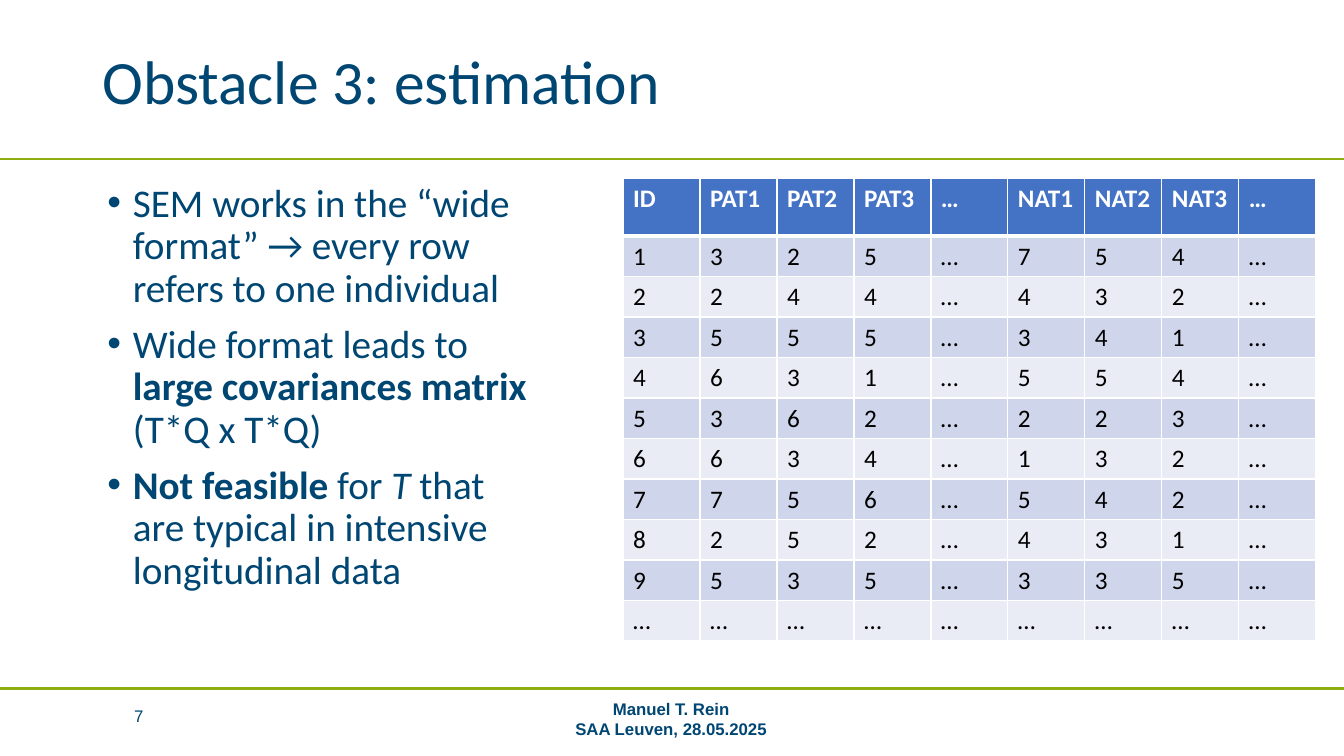
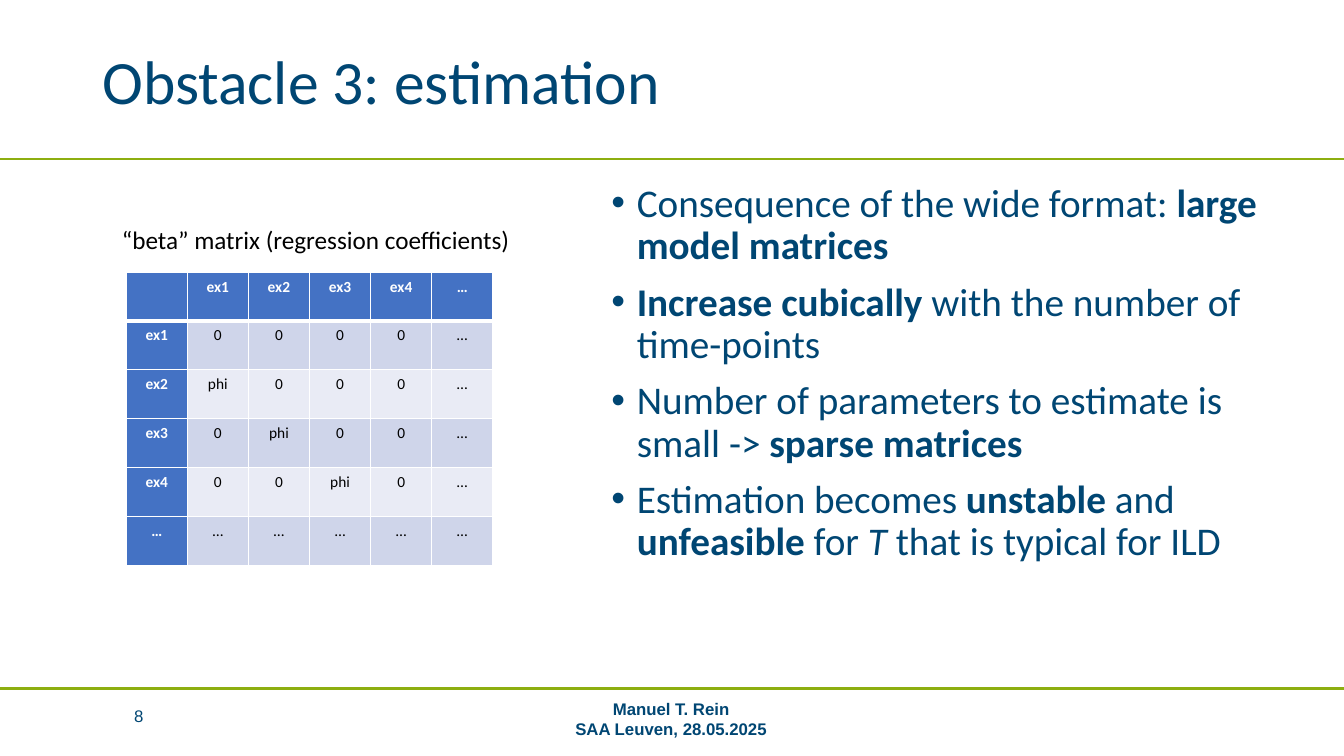
from typing import NamedTuple, Sequence

import pptx
import pptx.dml.color
import pptx.enum.shapes
import pptx.enum.text
import pptx.oxml
import pptx.oxml.ns
import pptx.oxml.xmlchemy
import pptx.slide
import pptx.text.text
import pptx.util

Cm = pptx.util.Cm
Pt = pptx.util.Pt
RGBColor = pptx.dml.color.RGBColor
Align = pptx.enum.text.PP_ALIGN
Anchor = pptx.enum.text.MSO_ANCHOR

NAVY = RGBColor(0x00, 0x46, 0x73)
GREEN = RGBColor(0x8D, 0xAE, 0x10)
HEADER_BLUE = RGBColor(0x44, 0x72, 0xC4)
ODD_ROW = RGBColor(0xCF, 0xD5, 0xEA)
EVEN_ROW = RGBColor(0xE9, 0xEB, 0xF5)
WHITE = RGBColor(0xFF, 0xFF, 0xFF)
BLACK = RGBColor(0x00, 0x00, 0x00)

SLIDE_WIDTH = Cm(33.87)
SLIDE_HEIGHT = Cm(19.05)
RULE_TOPS = (Cm(17.35), Cm(4.01))
BULLET_INDENT = Cm(0.64)
TITLE = "Obstacle 3: estimation"
FOOTER = ("Manuel T. Rein", "SAA Leuven, 28.05.2025")


class Run(NamedTuple):
    text: str
    bold: bool = False
    italic: bool = False


class Box(NamedTuple):
    left: float
    top: float
    width: float
    height: float


class Grid(NamedTuple):
    left: float
    top: float
    column_width: float
    header_height: float
    row_height: float
    rows: Sequence[Sequence[str]]
    size: float
    align: Align
    header_column: bool = False


TITLE_BOX = Box(2.33, 0.66, 29.21, 2.95)
FOOTER_BOX = Box(9.65, 17.6, 14.53, 1.02)
NUMBER_BOX = Box(2.33, 17.53, 2.33, 1.02)

WIDE_FORMAT = Grid(
    15.7, 4.5, 1.94, 1.45, 1.02,
    [line.split() for line in (
        "ID PAT1 PAT2 PAT3 … NAT1 NAT2 NAT3 …",
        "1 3 2 5 … 7 5 4 …",
        "2 2 4 4 … 4 3 2 …",
        "3 5 5 5 … 3 4 1 …",
        "4 6 3 1 … 5 5 4 …",
        "5 3 6 2 … 2 2 3 …",
        "6 6 3 4 … 1 3 2 …",
        "7 7 5 6 … 5 4 2 …",
        "8 2 5 2 … 4 3 1 …",
        "9 5 3 5 … 3 3 5 …",
        "… … … … … … … … …",
    )],
    18, Align.LEFT)

BETA_MATRIX = Grid(
    3.18, 6.86, 1.54, 1.23, 1.23,
    [
        ["", "ex1", "ex2", "ex3", "ex4", "…"],
        ["ex1", "0", "0", "0", "0", "…"],
        ["ex2", "phi", "0", "0", "0", "…"],
        ["ex3", "0", "phi", "0", "0", "…"],
        ["ex4", "0", "0", "phi", "0", "…"],
        ["…"] * 6,
    ],
    11, Align.CENTER, header_column=True)

WIDE_FORMAT_POINTS = [
    [Run("SEM works in the “wide format” → every row refers to one individual")],
    [Run("Wide format leads to "), Run("large covariances matrix ", bold=True),
     Run("(T*Q x T*Q)")],
    [Run("Not feasible", bold=True), Run(" for "), Run("T", italic=True),
     Run(" that are typical in intensive longitudinal data")],
]

MATRIX_POINTS = [
    [Run("Consequence of the wide format: "), Run("large model matrices", bold=True)],
    [Run("Increase cubically ", bold=True), Run("with the number of time-points")],
    [Run("Number of parameters to estimate is small -> "),
     Run("sparse matrices", bold=True)],
    [Run("Estimation becomes "), Run("unstable", bold=True), Run(" and "),
     Run("unfeasible", bold=True), Run(" for "), Run("T", italic=True),
     Run(" that is typical for ILD")],
]


def add_bullet(paragraph: pptx.text.text._Paragraph) -> None:
    properties = paragraph._p.get_or_add_pPr()
    properties.set("marL", str(BULLET_INDENT))
    properties.set("indent", str(-BULLET_INDENT))
    for tag, name, value in (("a:buFont", "typeface", "Arial"), ("a:buChar", "char", "•")):
        bullet = pptx.oxml.xmlchemy.OxmlElement(tag)
        bullet.set(name, value)
        properties.append(bullet)


def write_text(frame: pptx.text.text.TextFrame, paragraphs: Sequence[Sequence[Run]], *,
               size: float, color: RGBColor = NAVY, font: str = "Calibri",
               align: Align = Align.LEFT, line_spacing: float = 1.0,
               space_before: float = 0, bulleted: bool = False) -> None:
    for index, runs in enumerate(paragraphs):
        paragraph = frame.add_paragraph() if index else frame.paragraphs[0]
        paragraph.alignment = align
        paragraph.line_spacing = line_spacing
        paragraph.space_before = Pt(space_before)
        if bulleted:
            add_bullet(paragraph)
        for part in runs:
            run = paragraph.add_run()
            run.text = part.text
            run.font.size = Pt(size)
            run.font.name = font
            run.font.color.rgb = color
            run.font.bold = part.bold
            run.font.italic = part.italic


def add_frame(slide: pptx.slide.Slide, box: Box, *, anchor: Anchor = Anchor.TOP,
              inset: bool = True) -> pptx.text.text.TextFrame:
    frame = slide.shapes.add_textbox(*(Cm(length) for length in box)).text_frame
    frame.word_wrap = True
    frame.vertical_anchor = anchor
    if not inset:
        frame.margin_left = frame.margin_right = 0
        frame.margin_top = frame.margin_bottom = 0
    return frame


def add_rule(slide: pptx.slide.Slide, top: int) -> None:
    rule = slide.shapes.add_connector(
        pptx.enum.shapes.MSO_CONNECTOR.STRAIGHT, 0, top, SLIDE_WIDTH, top)
    rule.line.color.rgb = GREEN
    rule.line.width = Pt(1.5)
    rule._element.spPr.append(pptx.oxml.xmlchemy.OxmlElement("a:effectLst"))


def set_borders(cell: pptx.table._Cell, *, top: float, bottom: float) -> None:
    properties = cell._tc.get_or_add_tcPr()
    for side, width in (("L", 1), ("R", 1), ("T", top), ("B", bottom)):
        properties.append(pptx.oxml.parse_xml(
            f'<a:ln{side} {pptx.oxml.ns.nsdecls("a")} w="{Pt(width)}">'
            f'<a:solidFill><a:srgbClr val="{WHITE}"/></a:solidFill></a:ln{side}>'))


def add_grid(slide: pptx.slide.Slide, grid: Grid) -> None:
    row_count, column_count = len(grid.rows), len(grid.rows[0])
    table = slide.shapes.add_table(
        row_count, column_count, Cm(grid.left), Cm(grid.top),
        Cm(grid.column_width * column_count),
        Cm(grid.header_height + grid.row_height * (row_count - 1))).table
    for column in table.columns:
        column.width = Cm(grid.column_width)
    for row_index, values in enumerate(grid.rows):
        table.rows[row_index].height = Cm(
            grid.row_height if row_index else grid.header_height)
        for column_index, value in enumerate(values):
            cell = table.cell(row_index, column_index)
            is_header = row_index == 0 or (grid.header_column and column_index == 0)
            set_borders(cell, top=3 if row_index == 1 else 1,
                        bottom=1 if row_index else 3)
            cell.fill.solid()
            band = ODD_ROW if row_index % 2 else EVEN_ROW
            cell.fill.fore_color.rgb = HEADER_BLUE if is_header else band
            if value:
                write_text(cell.text_frame, [[Run(value, bold=is_header)]],
                           size=grid.size, align=grid.align,
                           color=WHITE if is_header else BLACK)


def add_content_slide(deck: pptx.presentation.Presentation, number: int, grid: Grid,
                      points: Sequence[Sequence[Run]], points_box: Box) -> pptx.slide.Slide:
    slide = deck.slides.add_slide(deck.slide_layouts[6])
    write_text(add_frame(slide, FOOTER_BOX, anchor=Anchor.MIDDLE, inset=False),
               [[Run(line, bold=True)] for line in FOOTER],
               size=12, font="Arial", align=Align.CENTER)
    write_text(add_frame(slide, NUMBER_BOX, anchor=Anchor.MIDDLE, inset=False),
               [[Run(str(number))]], size=12, font="Arial", align=Align.CENTER)
    for top in RULE_TOPS:
        add_rule(slide, top)
    write_text(add_frame(slide, TITLE_BOX, anchor=Anchor.MIDDLE), [[Run(TITLE)]],
               size=44, line_spacing=0.9)
    add_grid(slide, grid)
    write_text(add_frame(slide, points_box), points, size=28, line_spacing=0.9,
               space_before=10, bulleted=True)
    return slide


def main() -> None:
    deck = pptx.Presentation()
    deck.slide_width = SLIDE_WIDTH
    deck.slide_height = SLIDE_HEIGHT
    add_content_slide(deck, 7, WIDE_FORMAT, WIDE_FORMAT_POINTS,
                      Box(2.46, 4.5, 11.46, 12.09))
    matrix_slide = add_content_slide(deck, 8, BETA_MATRIX, MATRIX_POINTS,
                                     Box(15.16, 4.5, 17.58, 12.09))
    write_text(add_frame(matrix_slide, Box(2.82, 5.54, 10.97, 1.02)),
               [[Run("“beta” matrix (regression coefficients)")]], size=18, color=BLACK)
    deck.save("out.pptx")


if __name__ == "__main__":
    main()
